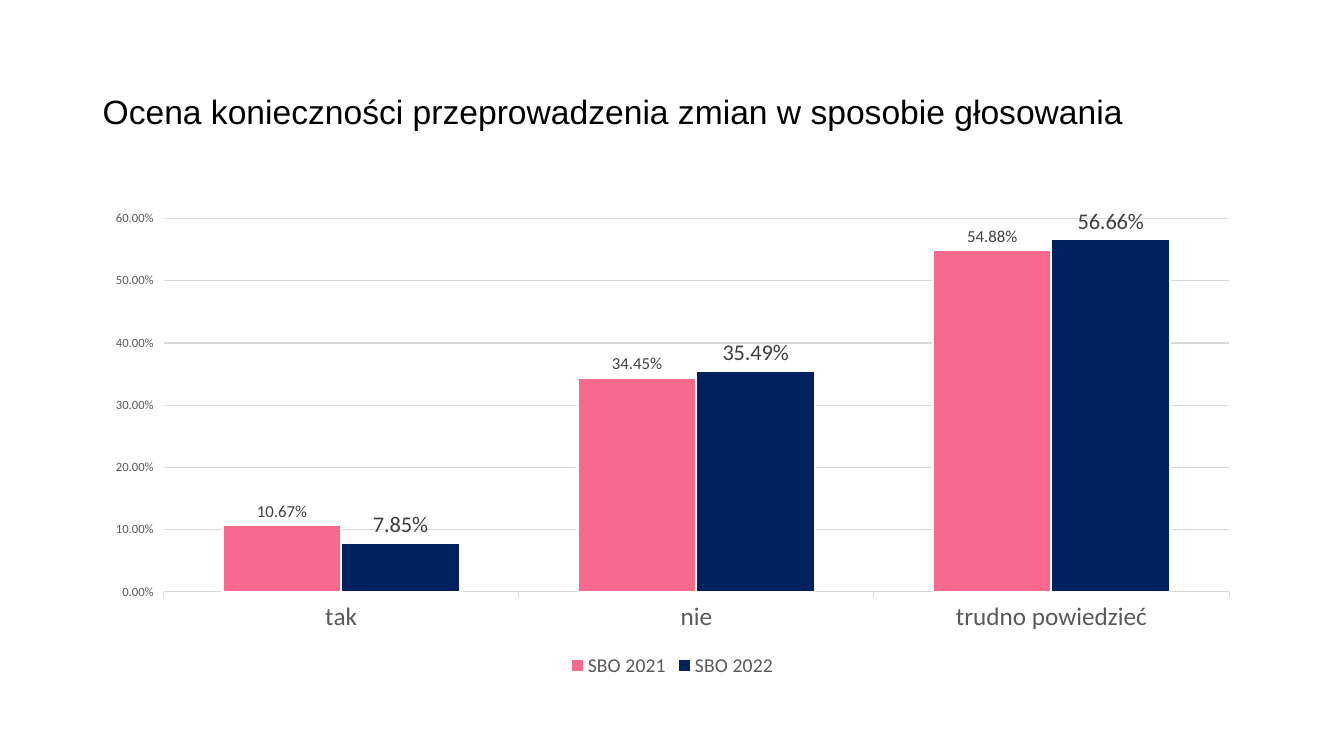
from pptx import Presentation
from pptx.chart.data import CategoryChartData
from pptx.dml.color import RGBColor
from pptx.enum.chart import XL_CHART_TYPE, XL_LABEL_POSITION, XL_LEGEND_POSITION, XL_TICK_MARK
from pptx.enum.text import MSO_ANCHOR
from pptx.util import Inches, Pt

BLACK = RGBColor(0x00, 0x00, 0x00)
WHITE = RGBColor(0xFF, 0xFF, 0xFF)
DARK_GRAY = RGBColor(0x40, 0x40, 0x40)
GRAY = RGBColor(0x59, 0x59, 0x59)
LIGHT_GRAY = RGBColor(0xD9, 0xD9, 0xD9)
PINK = RGBColor(0xF8, 0x69, 0x8D)
NAVY = RGBColor(0x00, 0x20, 0x60)

LEFT, WIDTH = Inches(0.92), Inches(11.5)
PERCENT = "0.00%"
ANSWERS = ["tak", "nie", "trudno powiedzieć"]
# Name, values, fill colour, label size
SURVEYS = [
    ("SBO 2021", (0.1067, 0.3445, 0.5488), PINK, 12),
    ("SBO 2022", (0.0785, 0.3549, 0.5666), NAVY, 16),
]


def set_font(font, size, color, name="Calibri"):
    font.name = name
    font.size = Pt(size)
    font.bold = False
    font.color.rgb = color


def set_line(line, color, width):
    line.color.rgb = color
    line.width = Pt(width)


def add_title(slide, text):
    text_frame = slide.shapes.add_textbox(LEFT, Inches(0.4), WIDTH, Inches(1.45)).text_frame
    text_frame.word_wrap = True
    text_frame.vertical_anchor = MSO_ANCHOR.MIDDLE
    text_frame.text = text
    paragraph = text_frame.paragraphs[0]
    paragraph.line_spacing = 0.9
    set_font(paragraph.runs[0].font, 24, BLACK, "Arial")


def format_axes(chart):
    category_axis, value_axis = chart.category_axis, chart.value_axis
    category_axis.major_tick_mark = XL_TICK_MARK.OUTSIDE
    set_font(category_axis.tick_labels.font, 18, GRAY)
    set_line(category_axis.format.line, LIGHT_GRAY, 0.75)

    value_axis.minimum_scale = 0
    value_axis.maximum_scale = 0.6
    value_axis.major_unit = 0.1
    value_axis.major_tick_mark = XL_TICK_MARK.OUTSIDE
    value_axis.tick_labels.number_format = PERCENT
    value_axis.tick_labels.number_format_is_linked = False
    set_font(value_axis.tick_labels.font, 9, GRAY)
    value_axis.format.line.fill.background()
    set_line(value_axis.major_gridlines.format.line, LIGHT_GRAY, 0.75)


def format_series(series, color, label_size):
    series.format.fill.solid()
    series.format.fill.fore_color.rgb = color
    set_line(series.format.line, WHITE, 1.5)
    labels = series.data_labels
    labels.show_value = True
    labels.position = XL_LABEL_POSITION.OUTSIDE_END
    labels.number_format = PERCENT
    labels.number_format_is_linked = False
    set_font(labels.font, label_size, DARK_GRAY)


def add_survey_chart(slide):
    chart_data = CategoryChartData(number_format=PERCENT)
    chart_data.categories = ANSWERS
    for name, values, _, _ in SURVEYS:
        chart_data.add_series(name, values)
    chart = slide.shapes.add_chart(
        XL_CHART_TYPE.COLUMN_CLUSTERED, LEFT, Inches(2), WIDTH, Inches(4.76), chart_data
    ).chart
    chart.has_title = False
    set_font(chart.font, 10, BLACK)

    # Columns
    plot = chart.plots[0]
    plot.gap_width = 100
    plot.overlap = 0
    plot.vary_by_categories = False
    for series, (_, _, color, label_size) in zip(plot.series, SURVEYS):
        format_series(series, color, label_size)

    format_axes(chart)

    # Legend
    chart.has_legend = True
    chart.legend.position = XL_LEGEND_POSITION.BOTTOM
    chart.legend.include_in_layout = False
    set_font(chart.legend.font, 14, GRAY)


def main():
    presentation = Presentation()
    presentation.slide_width = Inches(13.33)
    presentation.slide_height = Inches(7.5)
    slide = presentation.slides.add_slide(presentation.slide_layouts[6])
    add_title(slide, "Ocena konieczności przeprowadzenia zmian w sposobie głosowania")
    add_survey_chart(slide)
    presentation.save("out.pptx")


if __name__ == "__main__":
    main()
